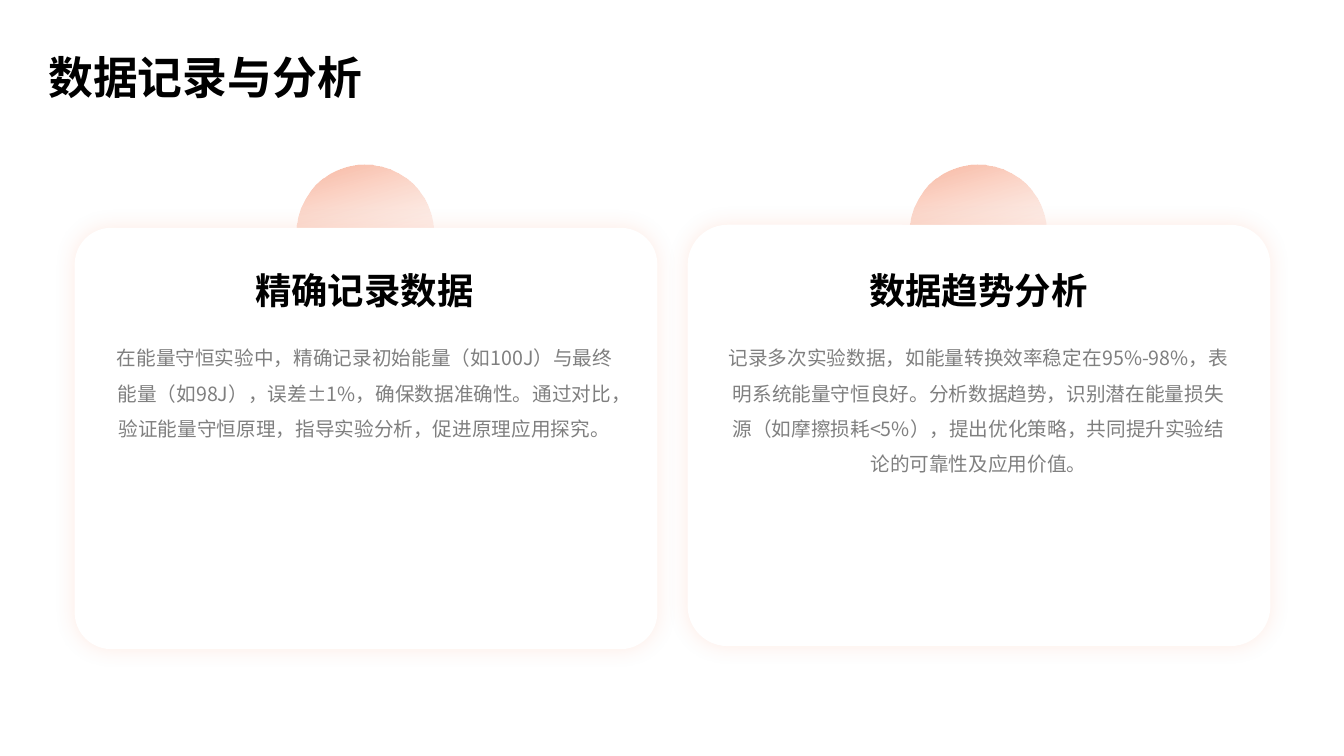
import dataclasses

import pptx
import pptx.dml.color
import pptx.enum.lang
import pptx.enum.shapes
import pptx.enum.text
import pptx.oxml
import pptx.oxml.ns
import pptx.util
from pptx.util import Inches

FONT = "Noto Sans CJK SC"
BLACK, GRAY, WHITE, CORAL, GLOW = "000000", "7F7F7F", "FFFFFF", "F9AF96", "F57A50"
DRAWING = pptx.oxml.ns.nsdecls("a")
ALIGN = pptx.enum.text.PP_ALIGN
ANCHOR = pptx.enum.text.MSO_ANCHOR
SHAPE = pptx.enum.shapes.MSO_SHAPE


@dataclasses.dataclass(frozen=True)
class Card:
    left: float
    top: float
    rounding: float
    circle_left: float
    text_left: float
    heading: str
    body: str


CARDS = [
    Card(0.74, 2.26, 0.087, 2.94, 0.99, "精确记录数据",
         "在能量守恒实验中，精确记录初始能量（如100J）与最终能量（如98J），误差±1%，"
         "确保数据准确性。通过对比，验证能量守恒原理，指导实验分析，促进原理应用探究。"),
    Card(6.82, 2.23, 0.095, 9.02, 7.08, "数据趋势分析",
         "记录多次实验数据，如能量转换效率稳定在95%-98%，表明系统能量守恒良好。"
         "分析数据趋势，识别潜在能量损失源（如摩擦损耗<5%），提出优化策略，"
         "共同提升实验结论的可靠性及应用价值。"),
]


def rgb(value: str) -> pptx.dml.color.RGBColor:
    return pptx.dml.color.RGBColor.from_string(value)


def add_plain_shape(page, kind, left: float, top: float, width: float, height: float):
    shape = page.shapes.add_shape(
        kind, Inches(left), Inches(top), Inches(width), Inches(height))
    shape.line.fill.background()
    shape.shadow.inherit = False
    return shape


def add_circle(page, card: Card) -> None:
    circle = add_plain_shape(
        page, SHAPE.FLOWCHART_CONNECTOR, card.circle_left, 1.63, 1.36, 1.36)
    circle.rotation = 344
    circle.fill.gradient()
    circle.fill.gradient_angle = 90
    for stop, color, position in zip(circle.fill.gradient_stops, (WHITE, CORAL), (0, 1)):
        stop.color.rgb = rgb(color)
        stop.position = position
    clear_color = circle._element.spPr.find(".//" + pptx.oxml.ns.qn("a:srgbClr"))
    clear_color.append(pptx.oxml.parse_xml(f'<a:alpha {DRAWING} val="0"/>'))


def add_panel(page, card: Card) -> None:
    panel = add_plain_shape(
        page, SHAPE.ROUNDED_RECTANGLE, card.left, card.top, 5.78, 4.18)
    panel.adjustments[0] = card.rounding
    panel.fill.solid()
    panel.fill.fore_color.rgb = rgb(WHITE)
    effects = panel._element.spPr.find(pptx.oxml.ns.qn("a:effectLst"))
    effects.append(pptx.oxml.parse_xml(
        f'<a:outerShdw {DRAWING} blurRad="{pptx.util.Pt(15)}" dist="0" dir="0" '
        f'algn="ctr" rotWithShape="0"><a:srgbClr val="{GLOW}">'
        f'<a:alpha val="15000"/></a:srgbClr></a:outerShdw>'))


def add_text(page, text: str, *, left: float, top: float, width: float, height: float,
             size: float, color: str = BLACK, bold: bool = False, align=ALIGN.LEFT,
             anchor=ANCHOR.TOP, line_spacing: float = 1.0, gap: float = 0) -> None:
    box = page.shapes.add_textbox(
        Inches(left), Inches(top), Inches(width), Inches(height))
    frame = box.text_frame
    frame.word_wrap = True
    frame.vertical_anchor = anchor
    para = frame.paragraphs[0]
    para.alignment = align
    para.line_spacing = line_spacing
    para.space_before = para.space_after = pptx.util.Pt(gap)
    span = para.add_run()
    span.text = text
    font = span.font
    font.size = pptx.util.Pt(size)
    font.bold = bold
    font.color.rgb = rgb(color)
    font.name = FONT
    font.language_id = pptx.enum.lang.MSO_LANGUAGE_ID.SIMPLIFIED_CHINESE
    latin = span._r.rPr.find(pptx.oxml.ns.qn("a:latin"))
    latin.addnext(pptx.oxml.parse_xml(f'<a:ea {DRAWING} typeface="{FONT}"/>'))


def main() -> None:
    deck = pptx.Presentation()
    deck.slide_width, deck.slide_height = Inches(13.33), Inches(7.5)
    page = deck.slides.add_slide(deck.slide_layouts[6])
    for card in CARDS:
        add_circle(page, card)
    for card in CARDS:
        add_panel(page, card)
        add_text(page, card.body, left=card.text_left, top=3.27, width=5.25, height=2.89,
                 size=14, color=GRAY, align=ALIGN.CENTER, line_spacing=1.5, gap=3)
        add_text(page, card.heading, left=card.text_left, top=2.53, width=5.25,
                 height=0.61, size=26, bold=True, align=ALIGN.CENTER,
                 anchor=ANCHOR.BOTTOM)
    add_text(page, "数据记录与分析", left=0.38, top=0.31, width=12.57, height=0.79,
             size=32, bold=True, anchor=ANCHOR.MIDDLE, line_spacing=1.2)
    deck.save("out.pptx")


if __name__ == "__main__":
    main()
